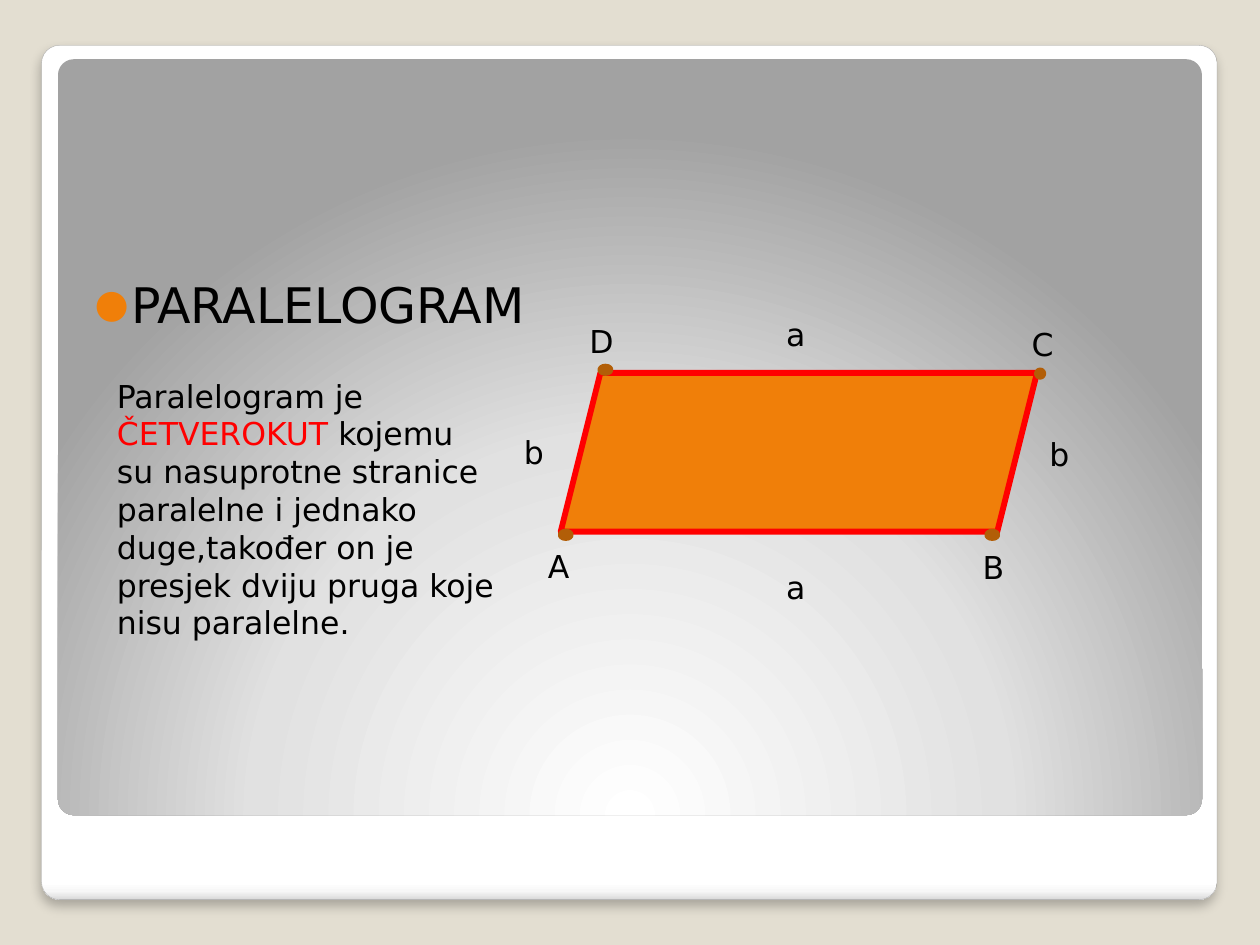
from dataclasses import dataclass

from lxml import etree
from pptx import Presentation
from pptx.dml.color import RGBColor
from pptx.enum.shapes import MSO_SHAPE
from pptx.enum.text import MSO_ANCHOR, MSO_AUTO_SIZE, PP_ALIGN
from pptx.oxml import parse_xml
from pptx.oxml.ns import qn
from pptx.util import Inches, Pt

ROUNDED = MSO_SHAPE.ROUNDED_RECTANGLE
PARALLELOGRAM = MSO_SHAPE.PARALLELOGRAM
OVAL = MSO_SHAPE.OVAL
TOP = MSO_ANCHOR.TOP
LEFT = PP_ALIGN.LEFT
NO_AUTOFIT = MSO_AUTO_SIZE.NONE
GROW = MSO_AUTO_SIZE.SHAPE_TO_FIT_TEXT
DRAWING_NS = 'xmlns:a="http://schemas.openxmlformats.org/drawingml/2006/main"'


@dataclass(frozen=True)
class Theme:
    """Colours, font and type sizes of the slide."""
    font: str = "DejaVu Sans"
    heading_size: float = 28
    text_size: float = 18
    outline: float = 3.35
    background: str = "E3DED1"
    ink: str = "000000"
    accent: str = "F07F09"
    vertex: str = "B25E07"
    side: str = "FF0000"
    frame_line: str = "A4A4A4"
    frame_stops: tuple = ((0, "FFFFFF"), (98, "FFFFFF"), (99, "F7F7F7"), (100, "DADADA"))
    panel_stops: tuple = ((0, "FFFFFF"), (55, "E1E1E1"), (100, "A2A2A2"))


THEME = Theme()


def rgb(colour):
    """Turn a hex string into a colour."""
    return RGBColor.from_string(colour)


def add_plain_shape(slide, kind, box, fill=None, line=None, width=THEME.outline):
    """Add a shape without shadow, in the given fill and line."""
    shape = slide.shapes.add_shape(kind, *map(Inches, box))
    shape.shadow.inherit = False
    if fill:
        shape.fill.solid()
        shape.fill.fore_color.rgb = rgb(fill)
    else:
        shape.fill.background()
    if line:
        shape.line.color.rgb = rgb(line)
        shape.line.width = Pt(width)
    else:
        shape.line.fill.background()
    return shape


def set_gradient(shape, stops, direction):
    """Replace the empty fill of a shape by a gradient."""
    marks = "".join(
        f'<a:gs pos="{position * 1000}"><a:srgbClr val="{colour}"/></a:gs>'
        for position, colour in stops)
    gradient = parse_xml(
        f'<a:gradFill {DRAWING_NS} rotWithShape="1"><a:gsLst>{marks}</a:gsLst>'
        f'{direction}</a:gradFill>')
    properties = shape._element.spPr
    properties.replace(properties.find(qn("a:noFill")), gradient)


def add_shadow(shape):
    """Give a shape a soft shadow below it."""
    effects = shape._element.spPr.find(qn("a:effectLst"))
    effects.append(parse_xml(
        f'<a:outerShdw {DRAWING_NS} blurRad="{Pt(6)}" dist="{Pt(4)}" dir="5400000" '
        f'algn="t" rotWithShape="0"><a:srgbClr val="{THEME.ink}">'
        '<a:alpha val="25000"/></a:srgbClr></a:outerShdw>'))


def format_run(run, size, colour=THEME.ink):
    """Set font, size and colour of a run."""
    run.font.name = THEME.font
    run.font.size = Pt(size)
    run.font.color.rgb = rgb(colour)


def add_text(slide, box, pieces):
    """Add a text box made of text and colour pairs."""
    text_box = slide.shapes.add_textbox(*map(Inches, box))
    frame = text_box.text_frame
    frame.word_wrap = True
    frame.auto_size = GROW
    for text, colour in pieces:
        run = frame.paragraphs[0].add_run()
        run.text = text
        format_run(run, THEME.text_size, colour)


def build_backdrop(slide, box):
    """Draw the white frame and the grey panel within it."""
    slide.background.fill.solid()
    slide.background.fill.fore_color.rgb = rgb(THEME.background)
    left, top, width, height = box
    frame = add_plain_shape(slide, ROUNDED, box, line=THEME.frame_line, width=0.16)
    set_gradient(frame, THEME.frame_stops, '<a:lin ang="5400000" scaled="0"/>')
    add_shadow(frame)
    panel = add_plain_shape(
        slide, ROUNDED, (left + 0.13, top + 0.11, width - 0.25, height - 0.78))
    set_gradient(
        panel, THEME.panel_stops,
        '<a:path path="circle"><a:fillToRect l="50000" t="175000" '
        'r="50000" b="-75000"/></a:path>')
    for card in (frame, panel):
        card.adjustments[0] = 0.021


def build_heading(slide, box):
    """Place the bulleted heading in the body placeholder."""
    title, body = slide.placeholders
    title._element.getparent().remove(title._element)
    body.left, body.top, body.width, body.height = map(Inches, box)
    tree = slide.shapes._spTree
    tree.remove(body._element)
    tree.append(body._element)
    frame = body.text_frame
    frame.auto_size = NO_AUTOFIT
    frame.vertical_anchor = TOP
    frame.margin_left, frame.margin_top = Inches(0.2), Inches(1.6)
    frame.text = "PARALELOGRAM"
    heading = frame.paragraphs[0]
    heading.alignment = LEFT
    heading.space_before = Pt(2.5)
    format_run(heading.runs[0], THEME.heading_size)
    properties = heading._p.get_or_add_pPr()
    properties.set("marL", str(Inches(0.29)))
    properties.set("indent", str(Inches(-0.29)))
    colour = etree.SubElement(properties, qn("a:buClr"))
    etree.SubElement(colour, qn("a:srgbClr"), val=THEME.accent)
    etree.SubElement(properties, qn("a:buSzPct"), val="80000")
    etree.SubElement(properties, qn("a:buFont"), typeface=THEME.font)
    etree.SubElement(properties, qn("a:buChar"), char="●")


def build_figure(slide, box):
    """Draw the parallelogram with its vertices, and name vertices and sides."""
    left, top, width, height = box
    right, bottom = left + width, top + height
    slant = height / 4
    add_plain_shape(slide, PARALLELOGRAM, box, THEME.accent, THEME.side)

    side_labels = (
        ("a", 1.69, -0.51, 0.39),
        ("a", 1.69, 1.5, 0.39),
        ("b", -0.39, 0.43, 0.39),
        ("b", width, 0.44, 0.47),
    )
    vertex_labels = (
        ("A", -0.2, 1.33, 0.35),
        ("B", 3.25, 1.34, 0.31),
        ("C", 3.64, -0.43, 0.47),
        ("D", 0.13, -0.45, 0.39),
    )
    vertices = (
        (left, bottom, 0.08),
        (right - slant - 0.08, bottom, 0.08),
        (left + slant, top - 0.05, 0.08),
        (right, top - 0.02, 0.05),
    )
    for x, y, dot_width in vertices:
        add_plain_shape(slide, OVAL, (x, y, dot_width, 0.05), THEME.accent, THEME.vertex)
    for name, dx, dy, label_width in side_labels + vertex_labels:
        add_text(slide, (left + dx, top + dy, label_width, 0.4), [(name, THEME.ink)])


def build_definition(slide, box):
    """Write the definition with its key word in red."""
    add_text(slide, box, [
        ("Paralelogram je ", THEME.ink),
        ("ČETVEROKUT", THEME.side),
        (" kojemu su nasuprotne stranice paralelne i jednako duge,također on je "
         "presjek dviju pruga koje nisu paralelne.", THEME.ink),
    ])


def main():
    """Build the slide and save it."""
    deck = Presentation()
    deck.slide_width, deck.slide_height = Inches(10), Inches(7.5)
    slide = deck.slides.add_slide(deck.slide_layouts[1])
    build_backdrop(slide, (0.33, 0.36, 9.33, 6.78))
    build_heading(slide, (0.55, 0.58, 8.95, 4.58))
    build_figure(slide, (4.45, 2.96, 3.78, 1.26))
    build_definition(slide, (0.83, 2.94, 3.23, 2.22))
    deck.save("out.pptx")


if __name__ == "__main__":
    main()
